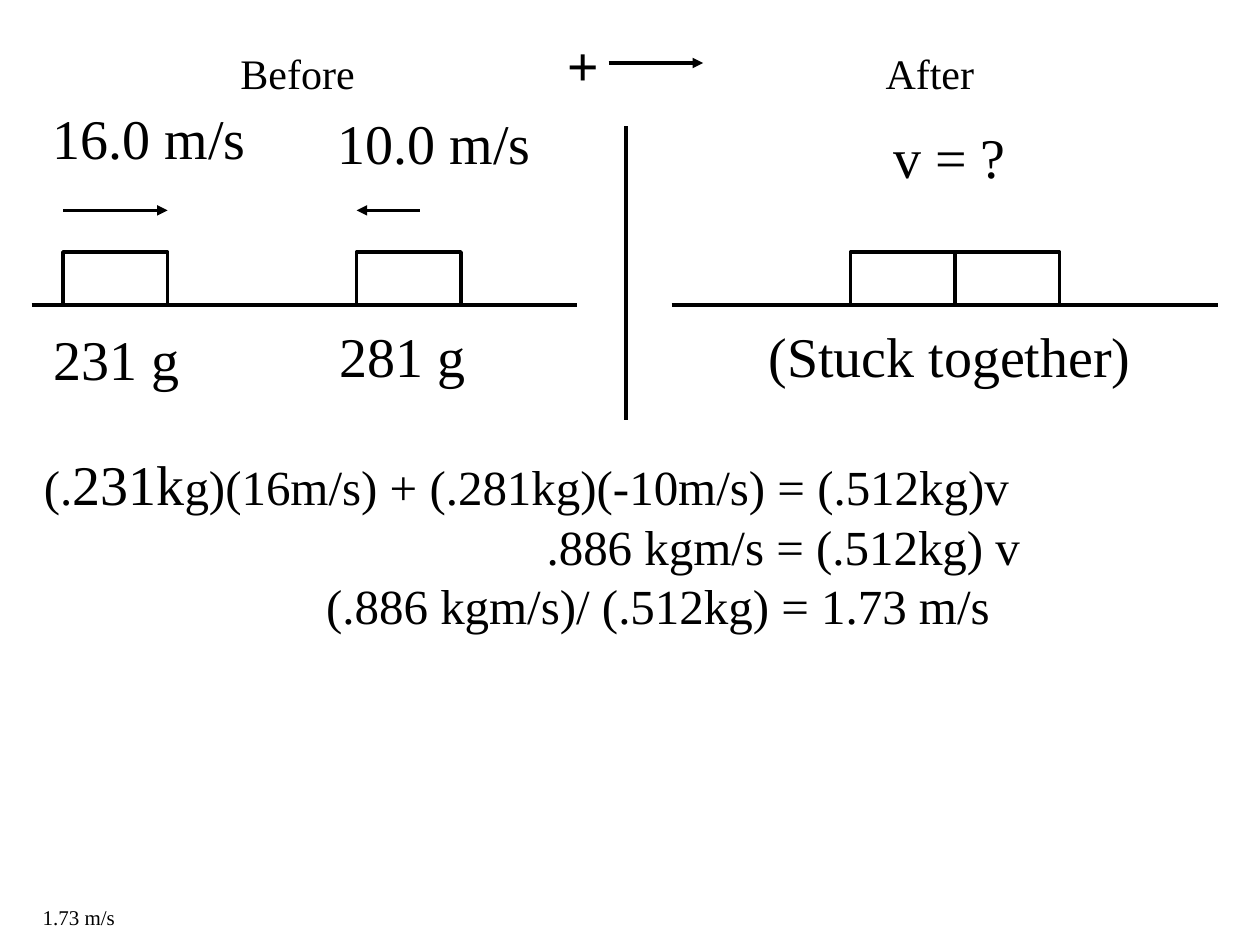
import pptx
import pptx.dml.color
import pptx.enum.shapes
import pptx.enum.text
import pptx.oxml.xmlchemy
import pptx.util

Inches = pptx.util.Inches
Pt = pptx.util.Pt
OxmlElement = pptx.oxml.xmlchemy.OxmlElement
FONT = "Times New Roman"
COLORS = {"ink": "000000"}
BLOCK_W, BLOCK_H = 0.83, 0.42
GROUND_Y = 2.42
ARROW_Y = 1.67


def rgb(name):
    return pptx.dml.color.RGBColor.from_string(COLORS[name])


def style_line(line):
    line.color.rgb = rgb("ink")
    line.width = Pt(2)


def style_run(r, size, bold=False):
    r.font.name = FONT
    r.font.size = Pt(size)
    r.font.bold = bold
    r.font.color.rgb = rgb("ink")


def add_line(shapes, x1, y1, x2, y2, arrow=False):
    s = shapes.add_connector(
        pptx.enum.shapes.MSO_CONNECTOR.STRAIGHT,
        Inches(x1), Inches(y1), Inches(x2), Inches(y2))
    style_line(s.line)
    if arrow:
        tail = OxmlElement("a:tailEnd")
        tail.set("type", "triangle")
        s.line._get_or_add_ln().append(tail)
    s._element.spPr.append(OxmlElement("a:effectLst"))


def add_block(shapes, x):
    s = shapes.add_shape(
        pptx.enum.shapes.MSO_SHAPE.RECTANGLE,
        Inches(x), Inches(GROUND_Y - BLOCK_H), Inches(BLOCK_W), Inches(BLOCK_H))
    s.shadow.inherit = False
    s.fill.background()
    style_line(s.line)


def add_text_frame(shapes, x, y, w, h, wrap):
    tf = shapes.add_textbox(Inches(x), Inches(y), Inches(w), Inches(h)).text_frame
    tf.word_wrap = wrap
    tf.auto_size = pptx.enum.text.MSO_AUTO_SIZE.SHAPE_TO_FIT_TEXT
    return tf


def add_label(shapes, text, x, y, w, h=0.63, size=32, bold=False):
    tf = add_text_frame(shapes, x, y, w, h, False)
    tf.text = text
    style_run(tf.paragraphs[0].runs[0], size, bold)


def add_solution(shapes, x, y, w, h, steps):
    tf = add_text_frame(shapes, x, y, w, h, True)
    for i, (indent, parts) in enumerate(steps):
        p = tf.paragraphs[0] if i == 0 else tf.add_paragraph()
        if indent:
            pPr = p._p.get_or_add_pPr()
            pPr.set("marL", str(int(Inches(indent))))
            pPr.set("indent", "0")
        for text, size in parts:
            r = p.add_run()
            r.text = text
            style_run(r, size)


def add_positive_direction(shapes):
    group = shapes.add_group_shape()
    add_line(group.shapes, 4.83, 0.5, 5.58, 0.5, arrow=True)
    add_label(group.shapes, "+", 4.4, 0.19, 0.45, bold=True)


def main():
    prs = pptx.Presentation()
    prs.slide_width, prs.slide_height = Inches(10), Inches(7.5)
    shapes = prs.slides.add_slide(prs.slide_layouts[6]).shapes

    add_line(shapes, 4.97, 1, 4.97, 3.33)
    for x1, x2 in ((0.25, 4.58), (5.33, 9.67)):
        add_line(shapes, x1, GROUND_Y, x2, GROUND_Y)
    for x in (0.5, 2.83, 6.75, 6.75 + BLOCK_W):
        add_block(shapes, x)
    for x1, x2 in ((0.5, 1.33), (3.33, 2.83)):
        add_line(shapes, x1, ARROW_Y, x2, ARROW_Y, arrow=True)
    add_positive_direction(shapes)

    add_label(shapes, "Before", 1.81, 0.33, 1.11, 0.5, 24)
    add_label(shapes, "After", 6.93, 0.33, 0.9, 0.5, 24)
    for text, x, y, w in (
        ("16.0 m/s", 0.32, 0.77, 1.73),
        ("10.0 m/s", 2.58, 0.81, 1.73),
        ("231 g", 0.33, 2.53, 1.2),
        ("281 g", 2.6, 2.5, 1.2),
        ("v = ?", 6.99, 0.92, 1.09),
        ("(Stuck together)", 6, 2.5, 3.08),
    ):
        add_label(shapes, text, x, y, w)

    add_solution(shapes, 0.25, 3.52, 9.5, 1.57, (
        (0, (("(.", 28), ("231k", 32),
             ("g)(16m/s) + (.281kg)(-10m/s) = (.512kg)v", 28))),
        (3.99, ((".886 kgm/s = (.512kg) v", 28),)),
        (2.24, (("(.886 kgm/s)/ (.512kg) = 1.73 m/s", 28),)),
    ))
    add_label(shapes, "1.73 m/s", 0.24, 7.13, 0.78, 0.3, 12)
    prs.save("out.pptx")


if __name__ == "__main__":
    main()
